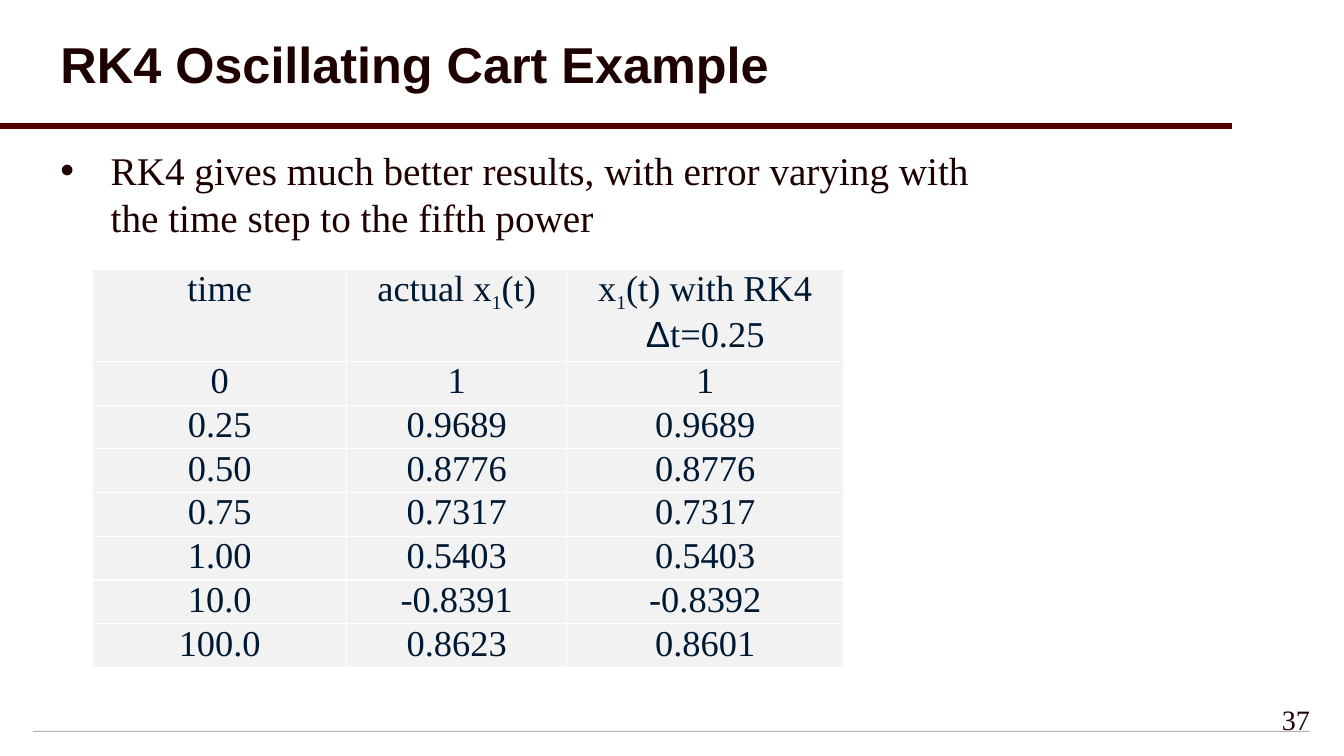
import pptx
import pptx.util
import pptx.dml.color
import pptx.enum.shapes
import pptx.enum.text
from lxml import etree
from pptx.oxml.ns import qn

RGB = pptx.dml.color.RGBColor
Inches, Pt = pptx.util.Inches, pptx.util.Pt
ALIGN = pptx.enum.text.PP_ALIGN
ANCHOR = pptx.enum.text.MSO_ANCHOR

MAROON = RGB(0x50, 0x00, 0x00)
DARK = RGB(0x1E, 0x00, 0x00)
NAVY = RGB(0x00, 0x19, 0x33)
CELL = RGB(0xF2, 0xF2, 0xF2)
WHITE = RGB(0xFF, 0xFF, 0xFF)
GREY = RGB(0xB2, 0xB2, 0xB2)

SERIF, SANS = "Times New Roman", "Arial"
MARGIN = 0.5
COLUMNS = [2.52, 2.18, 2.75]
HEADER_HEIGHT, ROW_HEIGHT = 0.86, 0.4

# Cell: list of paragraphs; paragraph: list of (text, style) runs.
HEADER = [
    [[("time", "")]],
    [[("actual x", ""), ("1", "sub"), ("(t)", "")]],
    [[("x", ""), ("1", "sub"), ("(t) with RK4", "")],
     [("Δ", "greek"), ("t=0.25", "")]],
]
RESULTS = [
    ("0", "1", "1"),
    ("0.25", "0.9689", "0.9689"),
    ("0.50", "0.8776", "0.8776"),
    ("0.75", "0.7317", "0.7317"),
    ("1.00", "0.5403", "0.5403"),
    ("10.0", "-0.8391", "-0.8392"),
    ("100.0", "0.8623", "0.8601"),
]


def add_run(p, text, size, color, font=SERIF, bold=False):
    r = p.add_run()
    r.text = text
    r.font.size, r.font.name, r.font.bold = Pt(size), font, bold
    r.font.color.rgb = color
    return r


def set_title(s, text):
    title = s.shapes.title
    title.left, title.top = Inches(MARGIN), Inches(0.08)
    title.width, title.height = Inches(12.67), Inches(1.17)
    tf = title.text_frame
    tf.vertical_anchor = ANCHOR.MIDDLE
    p = tf.paragraphs[0]
    p.alignment, p.line_spacing = ALIGN.LEFT, 0.9
    add_run(p, text, 36, DARK, SANS, True)


def add_text(s, box, text, size, align=ALIGN.LEFT):
    tf = s.shapes.add_textbox(*map(Inches, box)).text_frame
    tf.word_wrap = True
    p = tf.paragraphs[0]
    p.alignment = align
    add_run(p, text, size, DARK)
    return p


def add_bullet(p, indent):
    pPr = p._p.get_or_add_pPr()
    pPr.set("marL", str(Inches(indent)))
    pPr.set("indent", str(-Inches(indent)))
    color = etree.SubElement(pPr, qn("a:buClr"))
    etree.SubElement(color, qn("a:srgbClr"), val=str(DARK))
    etree.SubElement(pPr, qn("a:buFont"), typeface=SANS)
    etree.SubElement(pPr, qn("a:buChar"), char="•")


def add_rules(s, width):
    """Draw the thin footer rule and the heavy rule below the title."""
    footer = s.shapes.add_shape(
        pptx.enum.shapes.MSO_SHAPE.RECTANGLE,
        Inches(0.33), Inches(7.25), Inches(12.66), Inches(0.01))
    footer.shadow.inherit = False
    footer.fill.solid()
    footer.fill.fore_color.rgb = GREY
    footer.line.fill.background()

    y = Inches(1.25)
    rule = s.shapes.add_connector(
        pptx.enum.shapes.MSO_CONNECTOR.STRAIGHT, 0, y, int(width * 11 / 12), y)
    rule.line.color.rgb, rule.line.width = MAROON, Pt(4)
    etree.SubElement(rule._element.spPr, qn("a:effectLst"))


def set_borders(cell):
    tcPr = cell._tc.get_or_add_tcPr()
    for i, side in enumerate(("lnL", "lnR", "lnT", "lnB")):
        ln = etree.Element(qn(f"a:{side}"), w=str(Pt(1)))
        fill = etree.SubElement(ln, qn("a:solidFill"))
        etree.SubElement(fill, qn("a:srgbClr"), val=str(WHITE))
        tcPr.insert(i, ln)


def fill_cell(cell, paragraphs):
    cell.margin_left = cell.margin_right = Inches(0.07)
    cell.margin_top = cell.margin_bottom = 0
    cell.fill.solid()
    cell.fill.fore_color.rgb = CELL
    set_borders(cell)
    tf = cell.text_frame
    for i, runs in enumerate(paragraphs):
        p = tf.add_paragraph() if i else tf.paragraphs[0]
        p.alignment = ALIGN.CENTER
        for text, style in runs:
            r = add_run(p, text, 24 if style == "sub" else 26, NAVY,
                        SANS if style == "greek" else SERIF)
            if style == "sub":
                r.font._element.set("baseline", "-25000")


def add_results_table(s):
    rows = [HEADER] + [[[[(value, "")]] for value in row] for row in RESULTS]
    height = HEADER_HEIGHT + ROW_HEIGHT * len(RESULTS)
    table = s.shapes.add_table(
        len(rows), len(COLUMNS), Inches(0.92), Inches(2.67),
        Inches(sum(COLUMNS)), Inches(height)).table
    for column, width in zip(table.columns, COLUMNS):
        column.width = Inches(width)
    for i, row in enumerate(rows):
        table.rows[i].height = Inches(ROW_HEIGHT if i else HEADER_HEIGHT)
        for j, paragraphs in enumerate(row):
            fill_cell(table.cell(i, j), paragraphs)


def main():
    prs = pptx.Presentation()
    prs.slide_width, prs.slide_height = Inches(13.33), Inches(7.5)
    s = prs.slides.add_slide(prs.slide_layouts[5])
    add_rules(s, prs.slide_width)
    set_title(s, "RK4 Oscillating Cart Example")
    p = add_text(s, (MARGIN, 1.4, 9.34, 0.95),
                 "RK4 gives much better results, with error varying with "
                 "the time step to the fifth power", 28)
    add_bullet(p, 0.5)
    add_results_table(s)
    add_text(s, (12.42, 6.92, 0.67, 0.5), "37", 20, ALIGN.RIGHT)
    prs.save("out.pptx")


if __name__ == "__main__":
    main()
